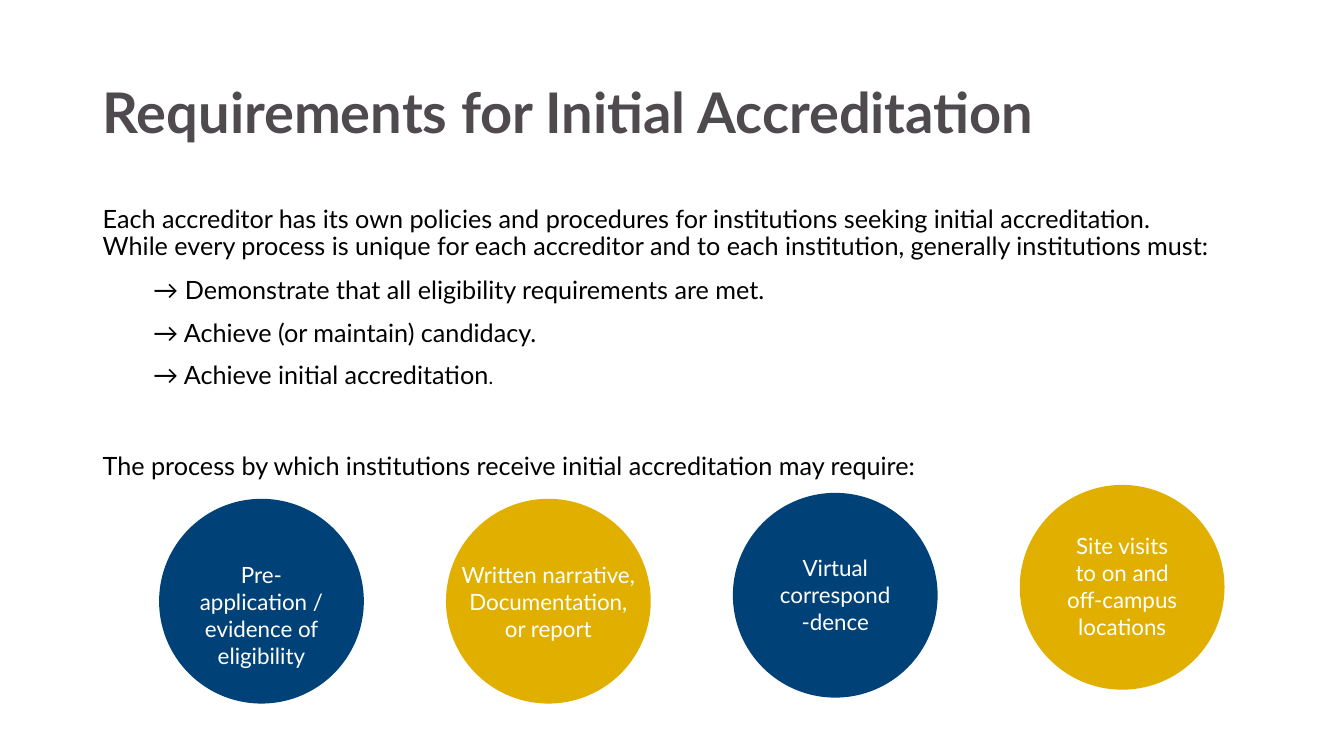
from pptx import Presentation
from pptx.dml.color import RGBColor
from pptx.enum import shapes, text
from pptx.util import Cm, Pt

FONT = "Lato"
GREY = RGBColor(0x4E, 0x4A, 0x4E)
BLACK = RGBColor(0, 0, 0)
WHITE = RGBColor(255, 255, 255)
NAVY = RGBColor(0x00, 0x42, 0x78)
GOLD = RGBColor(0xE1, 0xAF, 0x00)

TITLE = "Requirements for Initial Accreditation"
INTRO = ("Each accreditor has its own policies and procedures for institutions "
         "seeking initial accreditation.\v"
         "While every process is unique for each accreditor and to each "
         "institution, generally institutions must:")
DUTIES = ["→ Demonstrate that all eligibility requirements are met.",
          "→ Achieve (or maintain) candidacy.",
          "→ Achieve initial accreditation"]
LEAD_IN = "The process by which institutions receive initial accreditation may require:"

# Label, circle colour, circle top, label offset from circle top, label width (cm)
STEPS = [
    ("Pre-application / evidence of eligibility", NAVY, 12.57, 1.45, 4.39),
    ("Written narrative,\nDocumentation, or report", GOLD, 12.57, 1.45, 5),
    ("Virtual correspond-dence", NAVY, 12.42, 1.42, 3.4),
    ("Site visits to on and off-campus locations", GOLD, 12.22, 1.07, 3.4),
]
DIAMETER, PITCH = 5.16, 7.23


def add_text_frame(slide, left, top, width, height):
    frame = slide.shapes.add_textbox(Cm(left), Cm(top), Cm(width), Cm(height)).text_frame
    frame.word_wrap = True
    return frame


def style_runs(paragraph, size, color, bold=False):
    for run in paragraph.runs:
        run.font.name = FONT
        run.font.size = Pt(size)
        run.font.bold = bold
        run.font.color.rgb = color


def add_title(slide, left, top, width, height):
    frame = add_text_frame(slide, left, top, width, height)
    frame.vertical_anchor = text.MSO_ANCHOR.MIDDLE
    frame.text = TITLE
    heading = frame.paragraphs[0]
    heading.line_spacing = 0.9
    style_runs(heading, 40, GREY, bold=True)


def add_body(slide, left, top, width, height):
    frame = add_text_frame(slide, left, top, width, height)
    intro = frame.paragraphs[0]
    intro.text = INTRO

    # Indented duties
    for duty, before in zip(DUTIES, (12, 5, 5)):
        item = frame.add_paragraph()
        item.text = duty
        item.level = 1
        item.space_before, item.space_after = Pt(before), Pt(6)
        properties = item._p.get_or_add_pPr()
        properties.set("marL", str(Cm(1.27)))
        properties.set("indent", "0")
    full_stop = item.add_run()
    full_stop.text = "."

    lead_in = frame.add_paragraph()
    lead_in.text = LEAD_IN
    lead_in.space_before = Pt(39.5)

    for paragraph in frame.paragraphs:
        paragraph.line_spacing = 0.9
        style_runs(paragraph, 18, BLACK)
    full_stop.font.size = Pt(14)


def add_step(slide, left, top, label, color, label_offset, label_width):
    circle = slide.shapes.add_shape(shapes.MSO_SHAPE.OVAL, Cm(left), Cm(top),
                                    Cm(DIAMETER), Cm(DIAMETER))
    circle.shadow.inherit = False
    circle.fill.solid()
    circle.fill.fore_color.rgb = color
    circle.line.fill.background()

    # Label centred across the circle
    frame = add_text_frame(slide, left + (DIAMETER - label_width) / 2,
                           top + label_offset, label_width, 2.31)
    frame.text = label
    for paragraph in frame.paragraphs:
        paragraph.alignment = text.PP_ALIGN.CENTER
        style_runs(paragraph, 16, WHITE)


def main():
    deck = Presentation()
    deck.slide_width, deck.slide_height = Cm(33.87), Cm(19.05)
    slide = deck.slides.add_slide(deck.slide_layouts[6])
    add_title(slide, 2.34, 1.07, 29.21, 3.68)
    add_body(slide, 2.34, 5.08, 29.21, 6.4)
    for index, (label, color, top, offset, width) in enumerate(STEPS):
        add_step(slide, 4.01 + index * PITCH, top, label, color, offset, width)
    deck.save("out.pptx")


if __name__ == "__main__":
    main()
